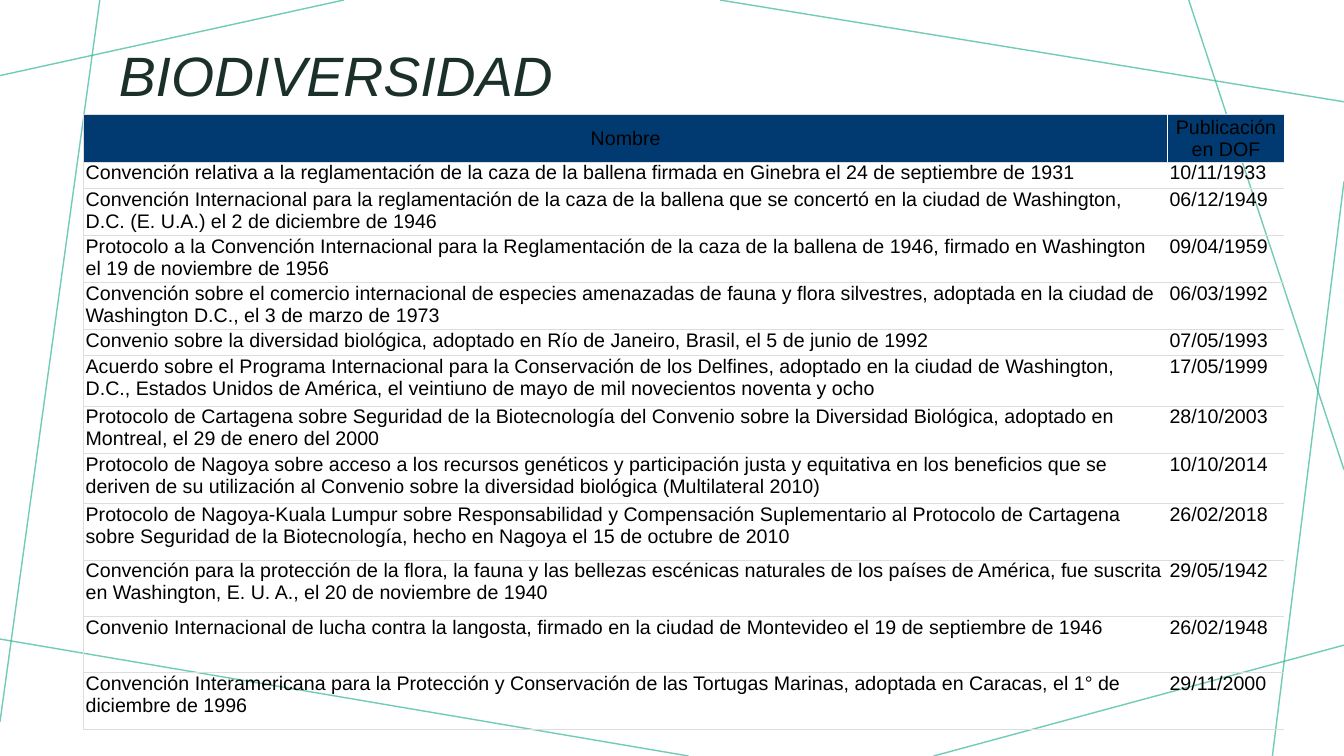
from dataclasses import dataclass

from lxml.etree import SubElement as Sub
from pptx import Presentation
from pptx.dml.color import RGBColor as RGB
from pptx.enum.shapes import MSO_CONNECTOR as Link
from pptx.enum.text import MSO_ANCHOR as Anchor, PP_ALIGN as Align
from pptx.oxml.ns import qn
from pptx.util import Inches, Pt


@dataclass(frozen=True)
class Theme:
    font: str = "Arial"
    title: str = "1B302B"
    text: str = "000000"
    head: str = "003A70"
    line: str = "37B598"
    rule: str = "DDDDDD"
    split: str = "FFFFFF"
    big: float = 39.6
    body: float = 14


THEME = Theme()

# Start and end of each background line
LINES = [
    (3.41, 0, 0, 0.75),
    (0.99, 0, 0, 7.16),
    (6.83, 7.5, 0, 6.34),
    (13.33, 6.4, 9.26, 7.5),
    (13.33, 1.8, 12.62, 7.5),
    (13.33, 4.66, 11.79, 0),
    (13.33, 1.01, 7.14, 0),
]

COLS = [10.75, 1.16]
HEAD = (0.45, "Nombre", "Publicación en DOF")
# Row height, treaty, date
ROWS = [
    (0.26, "Convención relativa a la reglamentación de la caza de la ballena "
     "firmada en Ginebra el 24 de septiembre de 1931", "10/11/1933"),
    (0.45, "Convención Internacional para la reglamentación de la caza de la ballena "
     "que se concertó en la ciudad de Washington, D.C. (E. U.A.) "
     "el 2 de diciembre de 1946", "06/12/1949"),
    (0.45, "Protocolo a la Convención Internacional para la Reglamentación de la caza "
     "de la ballena de 1946, firmado en Washington el 19 de noviembre de 1956",
     "09/04/1959"),
    (0.45, "Convención sobre el comercio internacional de especies amenazadas de fauna "
     "y flora silvestres, adoptada en la ciudad de Washington D.C., "
     "el 3 de marzo de 1973", "06/03/1992"),
    (0.26, "Convenio sobre la diversidad biológica, adoptado en Río de Janeiro, Brasil, "
     "el 5 de junio de 1992", "07/05/1993"),
    (0.5, "Acuerdo sobre el Programa Internacional para la Conservación de los Delfines, "
     "adoptado en la ciudad de Washington, D.C., Estados Unidos de América, "
     "el veintiuno de mayo de mil novecientos noventa y ocho", "17/05/1999"),
    (0.45, "Protocolo de Cartagena sobre Seguridad de la Biotecnología del Convenio sobre "
     "la Diversidad Biológica, adoptado en Montreal, el 29 de enero del 2000",
     "28/10/2003"),
    (0.5, "Protocolo de Nagoya sobre acceso a los recursos genéticos y participación justa "
     "y equitativa en los beneficios que se deriven de su utilización al Convenio "
     "sobre la diversidad biológica (Multilateral 2010)", "10/10/2014"),
    (0.56, "Protocolo de Nagoya-Kuala Lumpur sobre Responsabilidad y Compensación "
     "Suplementario al Protocolo de Cartagena sobre Seguridad de la Biotecnología, "
     "hecho en Nagoya el 15 de octubre de 2010", "26/02/2018"),
    (0.56, "Convención para la protección de la flora, la fauna y las bellezas escénicas "
     "naturales de los países de América, fue suscrita en Washington, E. U. A., "
     "el 20 de noviembre de 1940", "29/05/1942"),
    (0.56, "Convenio Internacional de lucha contra la langosta, firmado en la ciudad "
     "de Montevideo el 19 de septiembre de 1946", "26/02/1948"),
    (0.56, "Convención Interamericana para la Protección y Conservación de las Tortugas "
     "Marinas, adoptada en Caracas, el 1° de diciembre de 1996", "29/11/2000"),
]


def style(para, size, color, italic=False):
    font = para.runs[0].font
    font.name, font.size, font.italic = THEME.font, Pt(size), italic
    font.color.rgb = RGB.from_string(color)


def add_line(slide, *ends):
    line = slide.shapes.add_connector(Link.STRAIGHT, *map(Inches, ends))
    line.line.width = Pt(1)
    line.line.color.rgb = RGB.from_string(THEME.line)
    color = line.line._ln.find(".//" + qn("a:srgbClr"))
    Sub(color, qn("a:alpha"), val="70000")
    Sub(line._element.spPr, qn("a:effectLst"))


def add_title(slide, text):
    box = slide.shapes.add_textbox(
        Inches(1.08), Inches(0.43), Inches(10.83), Inches(0.7))
    frame = box.text_frame
    frame.word_wrap = True
    frame.vertical_anchor = Anchor.MIDDLE
    frame.text = text
    para = frame.paragraphs[0]
    para.line_spacing = 0.9
    style(para, THEME.big, THEME.title, italic=True)


def set_edges(cell, **colors):
    """Draw the sides given by letter (L, R, T, B) and clear the others."""
    props = cell._tc.get_or_add_tcPr()
    for side in "LRTB":
        edge = Sub(props, qn(f"a:ln{side}"), w=str(Pt(0.75)))
        if side in colors:
            fill = Sub(edge, qn("a:solidFill"))
            Sub(fill, qn("a:srgbClr"), val=colors[side])
        else:
            Sub(edge, qn("a:noFill"))


def fill_cell(cell, text, head, first):
    cell.margin_left = cell.margin_right = Inches(0.02)
    cell.margin_top = cell.margin_bottom = 0
    edges = {"T": THEME.rule} if head else {"T": THEME.rule, "B": THEME.rule}
    if first:
        edges["L"] = THEME.rule
    if head:
        edges["R" if first else "L"] = THEME.split
    set_edges(cell, **edges)
    cell.text = text
    para = cell.text_frame.paragraphs[0]
    style(para, THEME.body, THEME.text)
    if head:
        cell.fill.solid()
        cell.fill.fore_color.rgb = RGB.from_string(THEME.head)
        cell.vertical_anchor = Anchor.MIDDLE
        para.alignment = Align.CENTER
    else:
        cell.fill.background()


def add_grid(slide):
    rows = [HEAD, *ROWS]
    high = sum(row[0] for row in rows)
    table = slide.shapes.add_table(
        len(rows), len(COLS), Inches(0.83), Inches(1.14),
        Inches(sum(COLS)), Inches(high)).table
    table.first_row = table.horz_banding = False
    for col, width in zip(table.columns, COLS):
        col.width = Inches(width)
    for r, (height, *texts) in enumerate(rows):
        table.rows[r].height = Inches(height)
        for c, text in enumerate(texts):
            fill_cell(table.cell(r, c), text, head=r == 0, first=c == 0)


def main():
    deck = Presentation()
    deck.slide_width, deck.slide_height = Inches(13.33), Inches(7.5)
    slide = deck.slides.add_slide(deck.slide_layouts[6])
    for ends in LINES:
        add_line(slide, *ends)
    add_title(slide, "BIODIVERSIDAD")
    add_grid(slide)
    deck.save("out.pptx")


if __name__ == "__main__":
    main()
